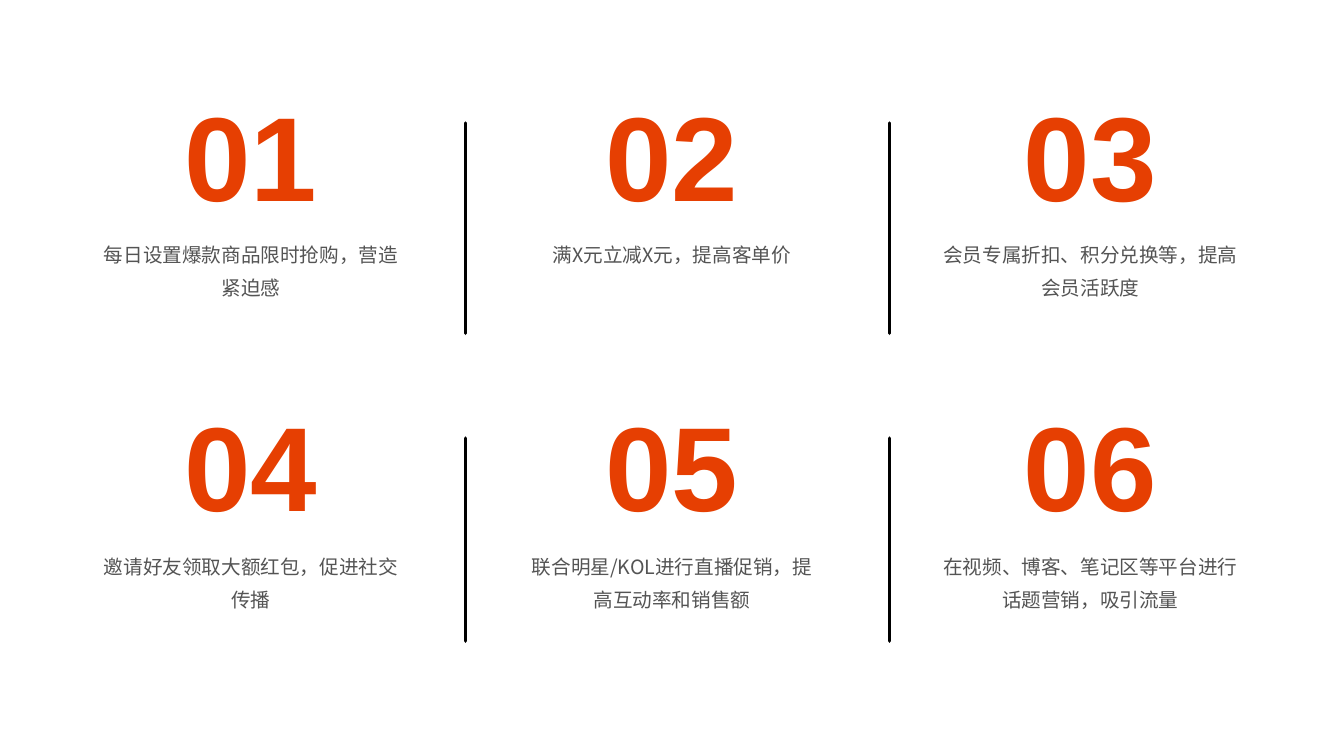
from lxml import etree
from pptx import Presentation
from pptx.dml.color import RGBColor
from pptx.enum import shapes, text
from pptx.oxml import ns
from pptx.util import Pt

COLOURS = {"number": "E63F02", "caption": "545454", "divider": "000000"}
NUMBER_FONT, CAPTION_FONT = "Arial", "Noto Sans CJK SC"

COLUMN_CENTRES = (268.8, 720, 1168.2)
DIVIDER_XS = (499, 953.3)
# number top, caption top, divider top, divider bottom
ROWS = ((62.6, 250.6, 131.8, 357.1), (394.6, 584.6, 469.4, 686.9))
CAPTIONS = (
    ("每日设置爆款商品限时抢购，营造紧迫感",
     "满X元立减X元，提高客单价",
     "会员专属折扣、积分兑换等，提高会员活跃度"),
    ("邀请好友领取大额红包，促进社交传播",
     "联合明星/KOL进行直播促销，提高互动率和销售额",
     "在视频、博客、笔记区等平台进行话题营销，吸引流量"),
)


class Page:
    """The current slide together with its text and line styles."""

    def __init__(self, deck):
        self.slide = deck.slides.add_slide(deck.slide_layouts[6])

    def centred_text(self, words, centre, top, width, height, size, leading,
                     font_name, colour, bold=False):
        box = self.slide.shapes.add_textbox(
            Pt(centre - width / 2), Pt(top), Pt(width), Pt(height))
        frame = box.text_frame
        frame.word_wrap = True
        frame.margin_left = frame.margin_right = 0
        frame.margin_top = frame.margin_bottom = 0
        paragraph = frame.paragraphs[0]
        paragraph.text = words
        paragraph.alignment = text.PP_ALIGN.CENTER
        paragraph.line_spacing = Pt(leading)
        font = paragraph.font
        font.size, font.bold, font.name = Pt(size), bold, font_name
        font.color.rgb = RGBColor.from_string(COLOURS[colour])
        properties = paragraph._p.pPr.find(ns.qn("a:defRPr"))
        etree.SubElement(properties, ns.qn("a:ea"), typeface=font_name)

    def number(self, value, centre, top):
        self.centred_text(f"{value:02d}", centre, top, 225.4, 179.2, 128, 179.2,
                          NUMBER_FONT, "number", bold=True)

    def caption(self, words, centre, top):
        self.centred_text(words, centre, top, 321, 70.6, 21, 35.3,
                          CAPTION_FONT, "caption")

    def divider(self, x, top, bottom):
        line = self.slide.shapes.add_connector(
            shapes.MSO_CONNECTOR.STRAIGHT, Pt(x), Pt(top), Pt(x), Pt(bottom))
        line.line.width = Pt(3.75)
        line.line.color.rgb = RGBColor.from_string(COLOURS["divider"])
        properties = line._element.spPr
        properties.find(ns.qn("a:ln")).set("cap", "rnd")
        etree.SubElement(properties, ns.qn("a:effectLst"))


def main():
    deck = Presentation()
    deck.slide_width, deck.slide_height = Pt(1440), Pt(810)
    page = Page(deck)
    value = 1
    for captions, row in zip(CAPTIONS, ROWS):
        number_top, caption_top, divider_top, divider_bottom = row
        for x in DIVIDER_XS:
            page.divider(x, divider_top, divider_bottom)
        for words, centre in zip(captions, COLUMN_CENTRES):
            page.number(value, centre, number_top)
            page.caption(words, centre, caption_top)
            value += 1
    deck.save("out.pptx")


if __name__ == "__main__":
    main()
